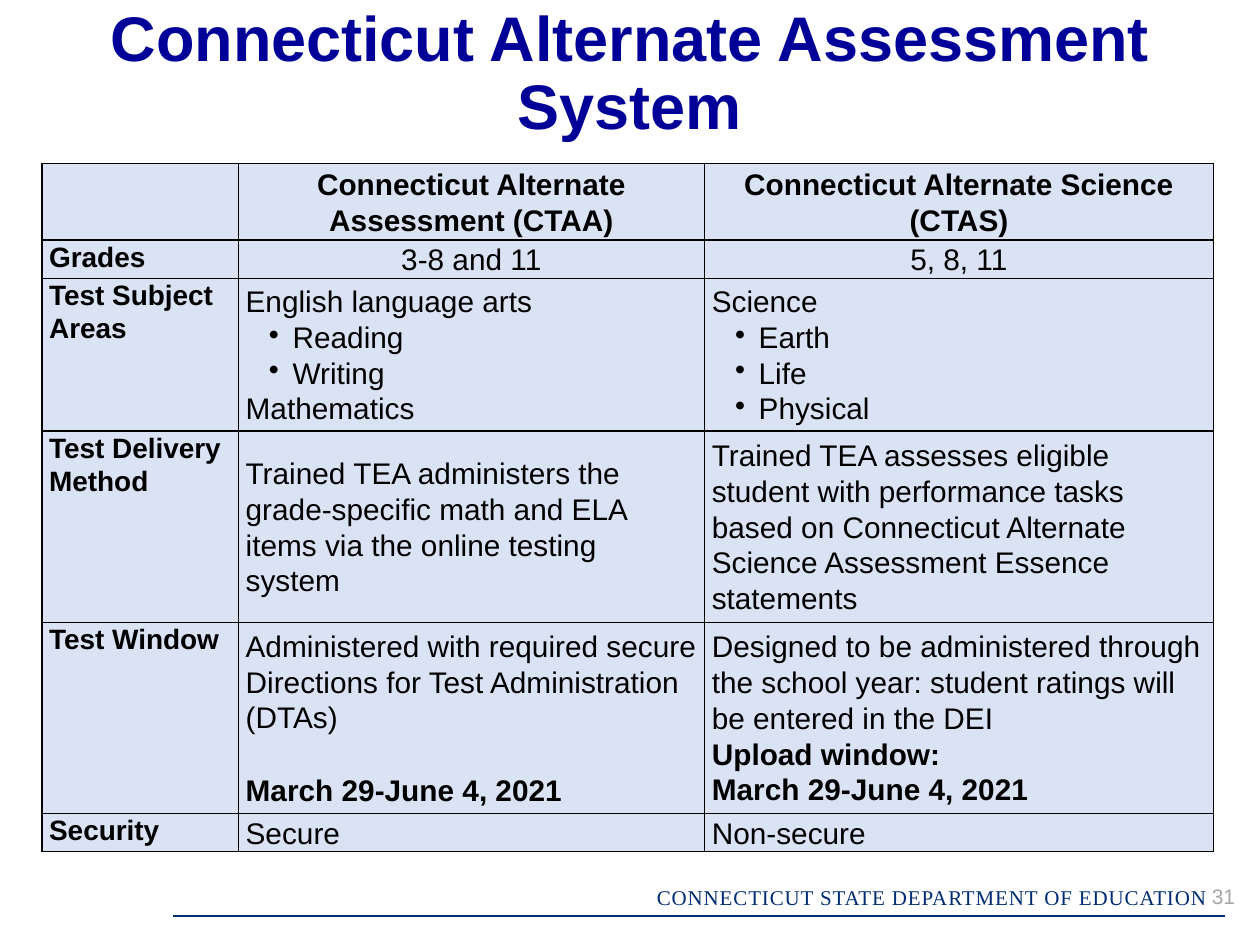
from lxml import etree
from pptx import Presentation
from pptx.dml.color import RGBColor
from pptx.enum import shapes, text
from pptx.oxml import ns
from pptx.util import Pt

TITLE = "Connecticut Alternate Assessment System"
FOOTER = "CONNECTICUT STATE DEPARTMENT OF EDUCATION"
PAGE_NUMBER = "31"
WINDOW = "March 29-June 4, 2021"

# A cell is a list of (text, kind) paragraphs; the kinds are in KINDS below.
ROWS = [
    ([],
     [("Connecticut Alternate Assessment (CTAA)", "head")],
     [("Connecticut Alternate Science", "head"), ("(CTAS)", "head")]),
    ([("Grades", "label")],
     [("3-8 and 11", "centred")],
     [("5, 8, 11", "centred")]),
    ([("Test Subject Areas", "label")],
     [("English language arts", "body"), ("Reading", "bullet"),
      ("Writing", "bullet"), ("Mathematics", "body")],
     [("Science", "body"), ("Earth", "bullet"), ("Life", "bullet"), ("Physical", "bullet")]),
    ([("Test Delivery Method", "label")],
     [("Trained TEA administers the grade-specific math and ELA items "
       "via the online testing system", "body")],
     [("Trained TEA assesses eligible student with performance tasks based on "
       "Connecticut Alternate Science Assessment Essence statements", "body")]),
    ([("Test Window", "label")],
     [("Administered with required secure Directions for Test Administration (DTAs)", "body"),
      (WINDOW, "spaced")],
     [("Designed to be administered through the school year: student ratings "
       "will be entered in the DEI", "body"),
      ("Upload window:", "strong"), (WINDOW, "strong")]),
    ([("Security", "label")],
     [("Secure", "body")],
     [("Non-secure", "body")]),
]
COLUMN_WIDTHS = [112.3, 266.4, 290.9]
ROW_HEIGHTS = [43.8, 21.8, 87.2, 109.2, 109.2, 21.8]
TABLE_LEFT, TABLE_TOP = 23.9, 93.4

LEFT, CENTER, RIGHT = text.PP_ALIGN.LEFT, text.PP_ALIGN.CENTER, text.PP_ALIGN.RIGHT
TOP, MIDDLE = text.MSO_ANCHOR.TOP, text.MSO_ANCHOR.MIDDLE
KINDS = {  # paragraph format, font format
    "head": ({"alignment": CENTER}, {"size": Pt(17), "bold": True}),
    "centred": ({"alignment": CENTER}, {"size": Pt(17), "bold": False}),
    "label": ({"alignment": LEFT}, {"size": Pt(16), "bold": True}),
    "body": ({"alignment": LEFT}, {"size": Pt(17), "bold": False}),
    "bullet": ({"alignment": LEFT, "level": 1}, {"size": Pt(17), "bold": False}),
    "strong": ({"alignment": LEFT}, {"size": Pt(17), "bold": True}),
    "spaced": ({"alignment": LEFT, "space_before": Pt(20.9)}, {"size": Pt(17), "bold": True}),
}


def color(value):
    return RGBColor.from_string(value)


def assign(target, values):
    for name, value in values.items():
        setattr(target, name, value)


def add_child(parent, tag, **attributes):
    return etree.SubElement(parent, ns.qn(tag), attributes)


def write(para, words, para_format, font_format, ink):
    assign(para, para_format)
    span = para.add_run()
    span.text = words
    assign(span.font, font_format)
    span.font.color.rgb = color(ink)
    return span


def add_text(page, words, place, frame_format, para_format, font_format, ink):
    box = page.shapes.add_textbox(*map(Pt, place))
    assign(box.text_frame, frame_format)
    return write(box.text_frame.paragraphs[0], words, para_format, font_format, ink)


def add_bullet(para):
    properties = para._p.get_or_add_pPr()
    properties.set("marL", str(Pt(26.8)))
    properties.set("indent", str(Pt(-13.5)))
    add_child(properties, "a:buChar", char="•")


def add_borders(cell):
    properties = cell._tc.get_or_add_tcPr()
    for index, side in enumerate(("a:lnL", "a:lnR", "a:lnT", "a:lnB")):
        line = etree.Element(ns.qn(side), w=str(Pt(1)))
        add_child(add_child(line, "a:solidFill"), "a:srgbClr", val="000000")
        properties.insert(index, line)


def fill_cell(cell, content, anchor):
    inset = Pt(4.2)
    assign(cell, {"margin_left": inset, "margin_right": inset, "margin_top": 0,
                  "margin_bottom": 0, "vertical_anchor": anchor})
    cell.fill.solid()
    cell.fill.fore_color.rgb = color("DAE3F3")
    add_borders(cell)
    for index, (words, kind) in enumerate(content):
        frame = cell.text_frame
        para = frame.add_paragraph() if index else frame.paragraphs[0]
        if kind == "bullet":
            add_bullet(para)
        para_format, font_format = KINDS[kind]
        write(para, words, {"line_spacing": 1.07, **para_format},
              {"name": "Arial", **font_format}, "000000")


def add_comparison(page):
    table = page.shapes.add_table(
        len(ROWS), len(COLUMN_WIDTHS), Pt(TABLE_LEFT), Pt(TABLE_TOP),
        Pt(sum(COLUMN_WIDTHS)), Pt(sum(ROW_HEIGHTS))).table
    for column, width in zip(table.columns, COLUMN_WIDTHS):
        column.width = Pt(width)
    for row, height, contents in zip(table.rows, ROW_HEIGHTS, ROWS):
        row.height = Pt(height)
        for index, content in enumerate(contents):
            fill_cell(row.cells[index], content, MIDDLE if index else TOP)


def add_footer(page):
    rule = page.shapes.add_connector(
        shapes.MSO_CONNECTOR.STRAIGHT, Pt(98.6), Pt(523.4), Pt(699.8), Pt(523.4))
    rule.line.width = Pt(0.75)
    rule.line.color.rgb = color("002D73")
    add_child(rule._element.spPr, "a:effectLst")
    span = add_text(page, FOOTER, (364.3, 501.8, 332.6, 21.6), {"word_wrap": True},
                    {"alignment": RIGHT}, {"name": "Times New Roman", "size": Pt(12)}, "002D73")
    span._r.get_or_add_rPr().set("spc", "50")
    add_text(page, PAGE_NUMBER, (685.4, 501.1, 29.5, 21.6), {"word_wrap": False},
             {"alignment": LEFT}, {"name": "Arial", "size": Pt(12)}, "A6A6A6")


def main():
    deck = Presentation()
    deck.slide_width, deck.slide_height = Pt(720), Pt(540)
    page = deck.slides.add_slide(deck.slide_layouts[6])
    add_footer(page)
    add_text(page, TITLE, (0, 0, 720, 86.4),
             {"word_wrap": True, "vertical_anchor": MIDDLE, "margin_left": Pt(5),
              "margin_right": Pt(5), "margin_top": Pt(3), "margin_bottom": Pt(3)},
             {"alignment": CENTER, "line_spacing": 0.9},
             {"name": "Arial", "size": Pt(36), "bold": True}, "000099")
    add_comparison(page)
    deck.save("out.pptx")


if __name__ == "__main__":
    main()
